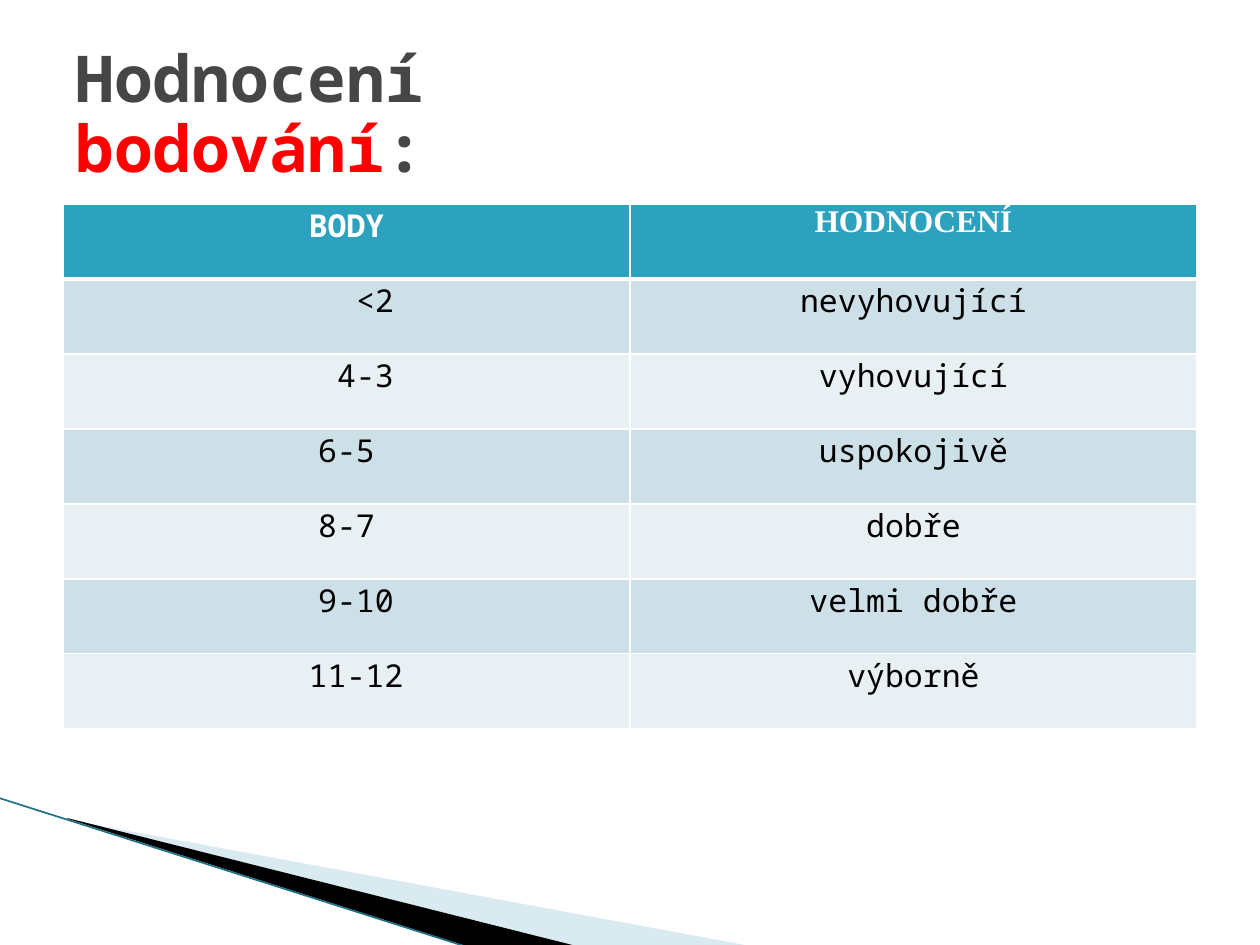
from lxml import etree
from pptx import Presentation, util as u
from pptx.dml.color import RGBColor
from pptx.enum import shapes, text
from pptx.oxml.ns import qn

# Content
TITLE_LINES = [
    [("Hodnocení", "title")],
    [("bodování", "accent"), (":", "title")],
]
HEADER = ("BODY", "HODNOCENÍ")
# points, grade, indent of the points in characters
GRADES = [
    ("<2", "nevyhovující", 3),
    ("4-3", "vyhovující", 2),
    ("6-5", "uspokojivě", 0),
    ("8-7", "dobře", 0),
    ("9-10", "velmi dobře", 1),
    ("11-12", "výborně", 1),
]
# fill, opacity in percent, outline points in px
WEDGES = [
    ("wedge", 40, [(69, 820), (750, 946), (575, 946), (69, 819)]),
    ("black", 100, [(67, 818), (576, 946), (469, 947), (68, 819)]),
]
EDGE = (-1, 798, 467, 947)

THEME = {
    "title": "464646", "accent": "FF0000", "white": "FFFFFF", "black": "000000",
    "header": "2DA2BF", "bands": ("CDE0E8", "E8F0F4"),
    "wedge": "A0CBDC", "edge": "1F7286",
    "mono": "Noto Sans Mono", "serif": "Times New Roman",
    "title_size": 36.9, "cell_size": 18,
}

# Layout in px
SCALE = 914400 // 126
SLIDE = (1260, 945)
TITLE_BOX = (63, 38, 1134, 157)
TABLE_BOX = (63, 204, 1134, 525)
CELL_INSET, CHARACTER = 9, 19


def px(value):
    return u.Emu(value * SCALE)


def color(name):
    return RGBColor.from_string(THEME.get(name, name))


def set_attributes(target, values):
    for name, value in values.items():
        setattr(target, name, value)


def add_run(paragraph, words, size, ink, font="mono", bold=False):
    run = paragraph.add_run()
    run.text = words
    set_attributes(run.font, {"name": THEME[font], "size": u.Pt(THEME[size]), "bold": bold})
    run.font.color.rgb = color(ink)


def add_wedge(slide, fill, opacity, points):
    builder = slide.shapes.build_freeform(*points[0], scale=SCALE)
    builder.add_line_segments(points[1:], close=True)
    shape = builder.convert_to_shape()
    shape.shadow.inherit = False
    shape.fill.solid()
    shape.fill.fore_color.rgb = color(fill)
    shape.line.fill.background()
    if opacity < 100:
        tint = shape.fill._xPr.find(".//" + qn("a:srgbClr"))
        etree.SubElement(tint, qn("a:alpha"), val=str(opacity * 1000))


def add_edge(slide):
    line = slide.shapes.add_connector(shapes.MSO_CONNECTOR.STRAIGHT, *map(px, EDGE))
    line.line.color.rgb = color("edge")
    line.line.width = u.Pt(0.95)
    etree.SubElement(line._element.spPr, qn("a:effectLst"))


def add_title(slide):
    frame = slide.shapes.add_textbox(*map(px, TITLE_BOX)).text_frame
    set_attributes(frame, {"word_wrap": True, "vertical_anchor": text.MSO_ANCHOR.MIDDLE})
    paragraph = frame.paragraphs[0]
    paragraph.line_spacing = 0.9
    for number, line in enumerate(TITLE_LINES):
        if number:
            paragraph.add_line_break()
        for words, ink in line:
            add_run(paragraph, words, "title_size", ink, bold=True)


def set_borders(cell, bottom):
    properties = cell._tc.get_or_add_tcPr()
    widths = {"lnL": 1, "lnR": 1, "lnT": 1, "lnB": bottom}
    for position, (side, width) in enumerate(widths.items()):
        border = etree.Element(qn("a:" + side), w=str(u.Pt(width)))
        fill = etree.SubElement(border, qn("a:solidFill"))
        etree.SubElement(fill, qn("a:srgbClr"), val=THEME["white"])
        properties.insert(position, border)


def fill_cell(cell, words, fill, ink, font="mono", bold=False, indent=0, bottom=1):
    set_attributes(cell, {"margin_left": px(CELL_INSET), "margin_right": px(CELL_INSET),
                          "margin_top": 0, "margin_bottom": 0})
    cell.fill.solid()
    cell.fill.fore_color.rgb = color(fill)
    set_borders(cell, bottom)
    paragraph = cell.text_frame.paragraphs[0]
    paragraph.alignment = text.PP_ALIGN.CENTER
    if indent:
        paragraph._p.get_or_add_pPr().set("marL", str(px(indent * CHARACTER)))
    add_run(paragraph, words, "cell_size", ink, font, bold)


def add_grades(slide):
    count = len(GRADES) + 1
    table = slide.shapes.add_table(count, len(HEADER), *map(px, TABLE_BOX)).table
    table.horz_banding = False
    for row in table.rows:
        row.height = px(TABLE_BOX[3] // count)
    for column, (words, font) in enumerate(zip(HEADER, ("mono", "serif"))):
        fill_cell(table.cell(0, column), words, "header", "white", font, bold=True, bottom=3)
    for row, (points, grade, indent) in enumerate(GRADES, 1):
        band = THEME["bands"][(row - 1) % 2]
        fill_cell(table.cell(row, 0), points, band, "black", indent=indent)
        fill_cell(table.cell(row, 1), grade, band, "black")


def main():
    presentation = Presentation()
    presentation.slide_width, presentation.slide_height = map(px, SLIDE)
    slide = presentation.slides.add_slide(presentation.slide_layouts[6])
    # Corner decoration
    for wedge in WEDGES:
        add_wedge(slide, *wedge)
    add_edge(slide)
    # Grading table and title
    add_grades(slide)
    add_title(slide)
    presentation.save("out.pptx")


if __name__ == "__main__":
    main()
